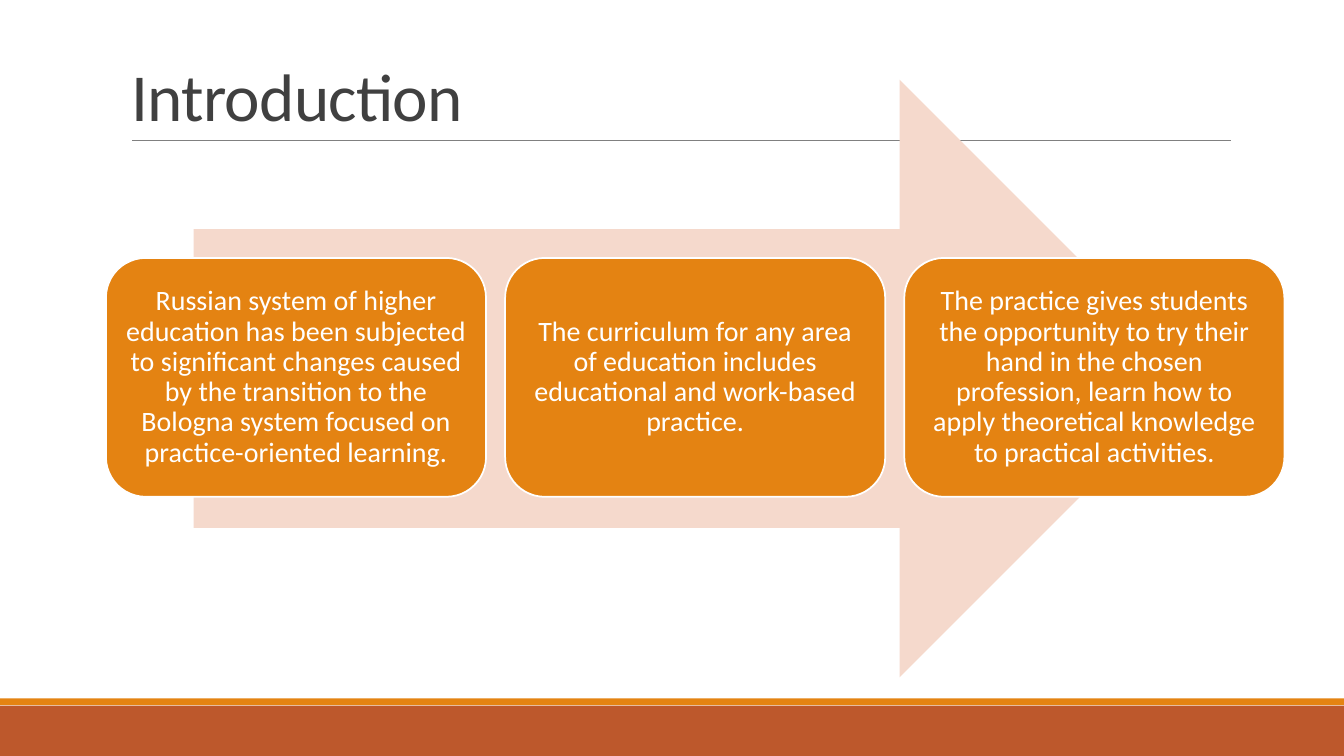
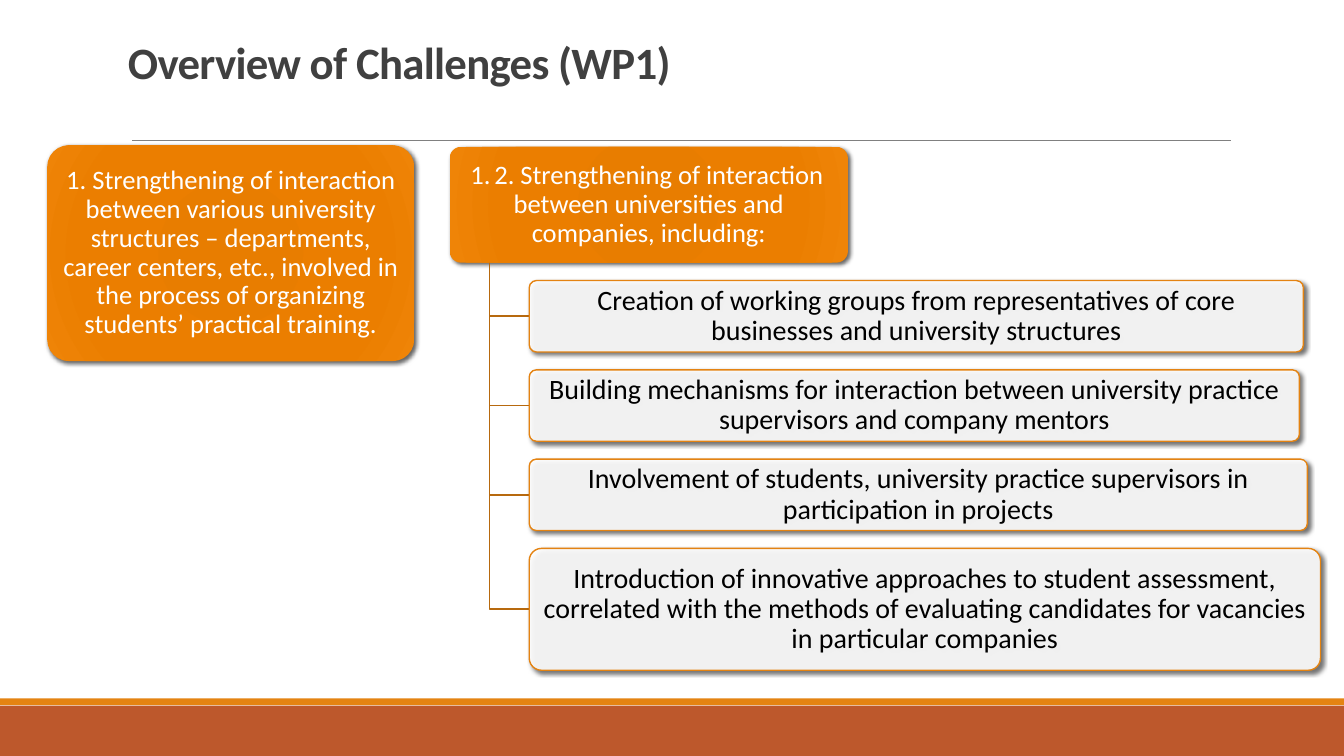
from pptx import Presentation
from pptx.dml.color import RGBColor
from pptx.enum.shapes import MSO_CONNECTOR, MSO_SHAPE
from pptx.enum.text import MSO_ANCHOR, PP_ALIGN
from pptx.oxml import parse_xml
from pptx.oxml.ns import nsdecls, qn
from pptx.util import Cm, Pt

FONT = "Calibri"
RUST = RGBColor(0xBD, 0x58, 0x2C)
ORANGE = RGBColor(0xE4, 0x83, 0x12)
BROWN = RGBColor(0xB7, 0x69, 0x0E)
PEACH = RGBColor(0xF5, 0xD9, 0xCC)
GRAY = RGBColor(0x80, 0x80, 0x80)
DARK = RGBColor(0x40, 0x40, 0x40)
WHITE = RGBColor(0xFF, 0xFF, 0xFF)
BLACK = RGBColor(0, 0, 0)

GLOW_STOPS = [(0, "E57B00"), (34, "E87D00"), (70, "EB7E00"), (100, "EF8407")]
GLOW = (
    f'<a:gradFill {nsdecls("a")} rotWithShape="1"><a:gsLst>'
    + "".join(
        f'<a:gs pos="{pos * 1000}"><a:srgbClr val="{color}"/></a:gs>'
        for pos, color in GLOW_STOPS
    )
    + '</a:gsLst><a:path path="circle"><a:fillToRect l="100000" t="100000" '
    'r="100000" b="100000"/></a:path></a:gradFill>'
)
SHADOW = (
    f'<a:outerShdw {nsdecls("a")} blurRad="{Pt(3)}" dist="{Pt(2)}" '
    'dir="2700000" algn="tl" rotWithShape="0"><a:srgbClr val="000000">'
    '<a:alpha val="60000"/></a:srgbClr></a:outerShdw>'
)


def set_title(slide, text, size, bold=False):
    title = slide.shapes.title
    title.text_frame.text = text
    title.text_frame.vertical_anchor = MSO_ANCHOR.BOTTOM
    paragraph = title.text_frame.paragraphs[0]
    paragraph.alignment = PP_ALIGN.LEFT
    paragraph.line_spacing = 0.85
    run = paragraph.runs[0]
    run.font.name, run.font.size, run.font.bold = FONT, Pt(size), bold
    run.font.color.rgb = DARK
    run.font._element.set("spc", "-50")


def add_card(slide, box, text, size, color, inset):
    """Add an orange rounded box with centred text; box is left, top, width, height in cm."""
    card = slide.shapes.add_shape(MSO_SHAPE.ROUNDED_RECTANGLE, *map(Cm, box))
    card.shadow.inherit = False
    card.fill.solid()
    card.fill.fore_color.rgb = ORANGE
    frame = card.text_frame
    frame.text = text
    frame.word_wrap = True
    frame.vertical_anchor = MSO_ANCHOR.MIDDLE
    frame.margin_left = frame.margin_right = Cm(inset)
    frame.margin_top = frame.margin_bottom = Cm(inset)
    paragraph = frame.paragraphs[0]
    paragraph.alignment = PP_ALIGN.CENTER
    paragraph.line_spacing = 0.9
    font = paragraph.runs[0].font
    font.name, font.size = FONT, Pt(size)
    font.color.rgb = color
    return card


prs = Presentation()
prs.slide_width, prs.slide_height = Cm(33.87), Cm(19.05)

# Shared layout: title place, bands and rule
layout = prs.slide_layouts[5]
for placeholder in list(layout.placeholders):
    if placeholder.placeholder_format.idx:
        placeholder.element.getparent().remove(placeholder.element)
    else:
        placeholder.left, placeholder.top = Cm(3.05), Cm(0.56)
        placeholder.width, placeholder.height = Cm(27.94), Cm(2.97)

intro = prs.slides.add_slide(layout)
furniture = []
for top, height, color in [(17.78, 1.27, RUST), (17.6, 0.17, ORANGE)]:
    band = intro.shapes.add_shape(
        MSO_SHAPE.RECTANGLE, 0, Cm(top), prs.slide_width, Cm(height)
    )
    band.shadow.inherit = False
    band.fill.solid()
    band.fill.fore_color.rgb = color
    band.line.fill.background()
    furniture.append(band)
rule = intro.shapes.add_connector(
    MSO_CONNECTOR.STRAIGHT, Cm(3.33), Cm(3.53), Cm(31.01), Cm(3.53)
)
rule.line.color.rgb = GRAY
rule.line.width = Pt(0.5)
rule.element.spPr.append(parse_xml(f'<a:effectLst {nsdecls("a")}/>'))
furniture.append(rule)
for part in furniture:
    layout.shapes.element.append(part.element)

# Slide 1: introduction
set_title(intro, "Introduction", 48)
arrow = intro.shapes.add_shape(
    MSO_SHAPE.RIGHT_ARROW, Cm(4.88), Cm(2.01), Cm(25.32), Cm(15.06)
)
arrow.shadow.inherit = False
arrow.fill.solid()
arrow.fill.fore_color.rgb = PEACH
arrow.line.fill.background()

STEPS = [
    "Russian system of higher education has been subjected to significant changes "
    "caused by the transition to the Bologna system focused on practice-oriented "
    "learning.",
    "The curriculum for any area of education includes educational and work-based "
    "practice.",
    "The practice gives students the opportunity to try their hand in the chosen "
    "profession, learn how to apply theoretical knowledge to practical activities.",
]
for index, text in enumerate(STEPS):
    step = add_card(
        intro, (2.67 + index * 10.06, 6.5, 9.58, 6.02), text, 20, WHITE, 0.2
    )
    step.line.color.rgb = WHITE
    step.line.width = Pt(1.25)

# Slide 2: challenges
overview = prs.slides.add_slide(layout)
set_title(overview, "Overview of Challenges (WP1)", 32, bold=True)
heading = overview.shapes.title
heading.left, heading.top = Cm(2.97), Cm(0.48)
heading.width, heading.height = Cm(19), Cm(1.88)

HEAD_LEFT, HEAD_TOP, HEAD_WIDTH, HEAD_HEIGHT = 11.33, 3.7, 10.04, 2.92
CHALLENGES = [
    ((1.19, 3.66, 9.25, 5.44),
     "1. Strengthening of interaction between various university structures – "
     "departments, career centers, etc., involved in the process of organizing "
     "students’ practical training."),
    ((HEAD_LEFT, HEAD_TOP, HEAD_WIDTH, HEAD_HEIGHT),
     "2. Strengthening of interaction between universities and companies, including:"),
]
cards = []
for box, text in CHALLENGES:
    challenge = add_card(overview, box, text, 19, WHITE, 0.09)
    challenge.fill.gradient()
    properties = challenge.element.spPr
    properties.replace(properties.find(qn("a:gradFill")), parse_xml(GLOW))
    challenge.line.fill.background()
    cards.append(challenge)
numbering = cards[-1].text_frame.paragraphs[0]._p.get_or_add_pPr()
numbering.append(
    parse_xml(f'<a:buAutoNum {nsdecls("a")} type="arabicPeriod"/>')
)

MEASURES = [
    (19.51, 1.8, "Creation of working groups from representatives of core businesses "
     "and university structures"),
    (19.41, 1.8, "Building mechanisms for interaction between university practice "
     "supervisors and company mentors"),
    (19.61, 1.8, "Involvement of students, university practice supervisors in "
     "participation in projects"),
    (19.94, 3.07, "Introduction of innovative approaches to student assessment, "
     "correlated with the methods of evaluating candidates for vacancies in "
     "particular companies"),
]
GAP = 0.45
trunk_x = HEAD_LEFT + HEAD_WIDTH * 0.1
measure_left = HEAD_LEFT + HEAD_WIDTH * 0.2
trunk_top = HEAD_TOP + HEAD_HEIGHT
top = trunk_top + GAP
for width, height, text in MEASURES:
    middle = top + height / 2
    outline = overview.shapes.build_freeform(Cm(trunk_x), Cm(trunk_top))
    outline.add_line_segments(
        [(Cm(trunk_x), Cm(middle)), (Cm(measure_left), Cm(middle))], close=False
    )
    branch = outline.convert_to_shape()
    branch.shadow.inherit = False
    branch.fill.background()
    branch.line.color.rgb = BROWN
    branch.line.width = Pt(1.25)

    measure = add_card(
        overview, (measure_left, top, width, height), text, 20, BLACK, 0.09
    )
    measure.fill.fore_color.rgb = WHITE
    tint = measure.element.spPr.find(qn("a:solidFill")).find(qn("a:srgbClr"))
    tint.append(parse_xml(f'<a:alpha {nsdecls("a")} val="90000"/>'))
    measure.line.color.rgb = ORANGE
    measure.line.width = Pt(1)
    cards.append(measure)
    top += height + GAP

for card in cards:
    card.adjustments[0] = 0.1
    card.element.spPr.find(qn("a:effectLst")).append(parse_xml(SHADOW))

prs.save("out.pptx")
